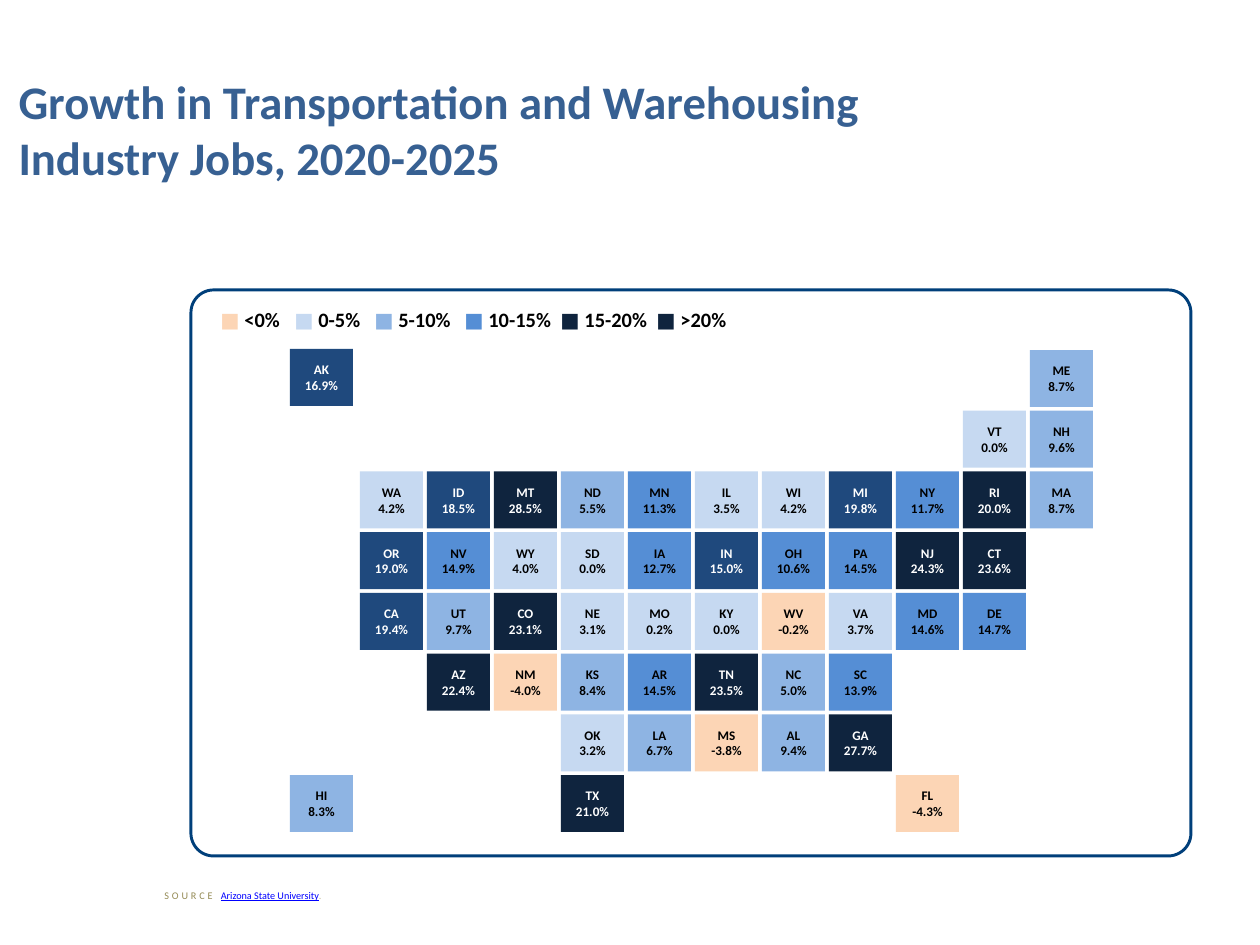
from pptx import Presentation
from pptx import util as u
from pptx.dml.color import RGBColor
from pptx.enum import shapes, text
from pptx.oxml import ns
from lxml import etree

PX = u.Inches(1) / 105
COLORS = {
    "title": "376092", "panel": "003F7A", "black": "000000", "white": "FFFFFF",
    "negative": "FCD5B5", "under5": "C6D9F1", "under10": "8EB4E3",
    "under15": "558ED5", "under20": "1F497D", "over20": "0F243E",
    "source": "948A54", "link": "0000FF", "stop": "C4BD97",
}
BANDS = ["negative", "under5", "under10", "under15", "under20", "over20"]
LIMITS = [0, 5, 10, 15, 20]
LEGEND = [("negative", "<0%"), ("under5", "0-5%"), ("under10", "5-10%"),
          ("under15", "10-15%"), ("over20", "15-20%"), ("over20", ">20%")]
LEGEND_TABS = [74, 154, 244, 340, 436]
TILE_SIZE = (63, 57)
COLUMN_PITCH = 67
LAST_ROW = 7
STATE_STRIPS = [
    (0, 10, "ME 8.7"),
    (1, 9, "VT 0.0, NH 9.6"),
    (2, 0, "WA 4.2, ID 18.5, MT 28.5, ND 5.5, MN 11.3, IL 3.5, WI 4.2, MI 19.8, NY 11.7, RI 20.0, MA 8.7"),
    (3, 0, "OR 19.0, NV 14.9, WY 4.0, SD 0.0, IA 12.7, IN 15.0, OH 10.6, PA 14.5, NJ 24.3, CT 23.6"),
    (4, 0, "CA 19.4, UT 9.7, CO 23.1, NE 3.1, MO 0.2, KY 0.0, WV -0.2, VA 3.7, MD 14.6, DE 14.7"),
    (5, 1, "AZ 22.4, NM -4.0, KS 8.4, AR 14.5, TN 23.5, NC 5.0, SC 13.9"),
    (6, 3, "OK 3.2, LA 6.7, MS -3.8, AL 9.4, GA 27.7"),
    (LAST_ROW, 3, "TX 21.0"),
    (LAST_ROW, 8, "FL -4.3"),
]


def px(*lengths):
    """Turn px lengths into EMU."""
    return [u.Emu(round(length * PX)) for length in lengths]


def set_values(target, values):
    """Set every attribute named in the dict."""
    for name, value in values.items():
        setattr(target, name, value)


def color(name):
    """Look up a colour by its role."""
    return RGBColor.from_string(COLORS[name])


def add_run(paragraph, words, size, color_name, **values):
    """Append formatted words to a paragraph."""
    run = paragraph.add_run()
    run.text = words
    set_values(run.font, {"name": "Calibri", "size": u.Pt(size), **values})
    run.font.color.rgb = color(color_name)
    return run


def add_title(slide, box):
    """Place and format the title placeholder."""
    title = slide.shapes.title
    set_values(title, dict(zip(("left", "top", "width", "height"), px(*box))))
    set_values(title.text_frame, {"word_wrap": True, "auto_size": text.MSO_AUTO_SIZE.NONE,
                                  "vertical_anchor": text.MSO_ANCHOR.MIDDLE})
    paragraph = title.text_frame.paragraphs[0]
    paragraph.alignment = text.PP_ALIGN.LEFT
    add_run(paragraph, "Growth in Transportation and Warehousing Industry Jobs, 2020-2025",
            32, "title", bold=True)


def add_tile(slide, left, top, state, growth):
    """Draw one state tile coloured by its growth band."""
    shape = slide.shapes.add_shape(shapes.MSO_SHAPE.RECTANGLE, *px(left, top, *TILE_SIZE))
    shape.shadow.inherit = False
    band = sum(float(growth) >= limit for limit in LIMITS)
    shape.fill.solid()
    shape.fill.fore_color.rgb = color(BANDS[band])
    shape.line.fill.background()
    frame = shape.text_frame
    set_values(frame, {"margin_left": 0, "margin_right": 0, "word_wrap": True,
                       "vertical_anchor": text.MSO_ANCHOR.MIDDLE})
    for paragraph, words in ((frame.paragraphs[0], state), (frame.add_paragraph(), f"{growth}%")):
        paragraph.alignment = text.PP_ALIGN.CENTER
        add_run(paragraph, words, 9, "white" if band > 3 else "black", bold=True)


def add_state_map(slide, box):
    """Lay the state tiles on a grid, with Alaska and Hawaii at its left."""
    left, top, _, height = box
    row_pitch = (height - TILE_SIZE[1]) / LAST_ROW
    for row, first_column, states in STATE_STRIPS:
        for column, entry in enumerate(states.split(", "), first_column):
            add_tile(slide, left + column * COLUMN_PITCH, top + row * row_pitch, *entry.split())
    add_tile(slide, left - 70, top - 1, "AK", "16.9")
    add_tile(slide, left - 70, top + height - TILE_SIZE[1], "HI", "8.3")


def add_legend(slide, box):
    """Write the colour key on one line with tab stops."""
    frame = slide.shapes.add_textbox(*px(*box)).text_frame
    frame.word_wrap = True
    paragraph = frame.paragraphs[0]
    properties = paragraph._p.get_or_add_pPr()
    tabs = etree.SubElement(properties, ns.qn("a:tabLst"))
    for position in px(*LEGEND_TABS):
        etree.SubElement(tabs, ns.qn("a:tab"), pos=str(position), algn="l")
    for index, (band, label) in enumerate(LEGEND):
        add_run(paragraph, "\t■" if index else "■", 14, band, bold=True)
        add_run(paragraph, f" {label}", 14, "black", bold=True)


def add_panel(slide, box):
    """Draw the rounded outline around the map."""
    panel = slide.shapes.add_shape(shapes.MSO_SHAPE.ROUNDED_RECTANGLE, *px(*box))
    panel.shadow.inherit = False
    panel.adjustments[0] = 0.04
    panel.fill.background()
    panel.line.color.rgb = color("panel")
    panel.line.width = u.Pt(2)


def add_source(slide, box):
    """Write the source line."""
    frame = slide.shapes.add_textbox(*px(*box)).text_frame
    frame.word_wrap = True
    paragraph = frame.paragraphs[0]
    label = add_run(paragraph, "SOURCE ", 7, "source")
    label.font._element.set("spc", "200")
    add_run(paragraph, "Arizona State University", 7, "link", underline=True)
    add_run(paragraph, ".", 7, "stop")


def main():
    """Build and save the slide."""
    presentation = Presentation()
    set_values(presentation, {"slide_width": u.Inches(12), "slide_height": u.Inches(9)})
    slide = presentation.slides.add_slide(presentation.slide_layouts[5])
    add_title(slide, (8, 34, 945, 189))
    add_state_map(slide, (360, 350, 733, 482))
    add_legend(slide, (210, 302, 740, 37))
    add_panel(slide, (191, 290, 1000, 566))
    add_source(slide, (154, 884, 881, 23))
    presentation.save("out.pptx")


if __name__ == "__main__":
    main()
